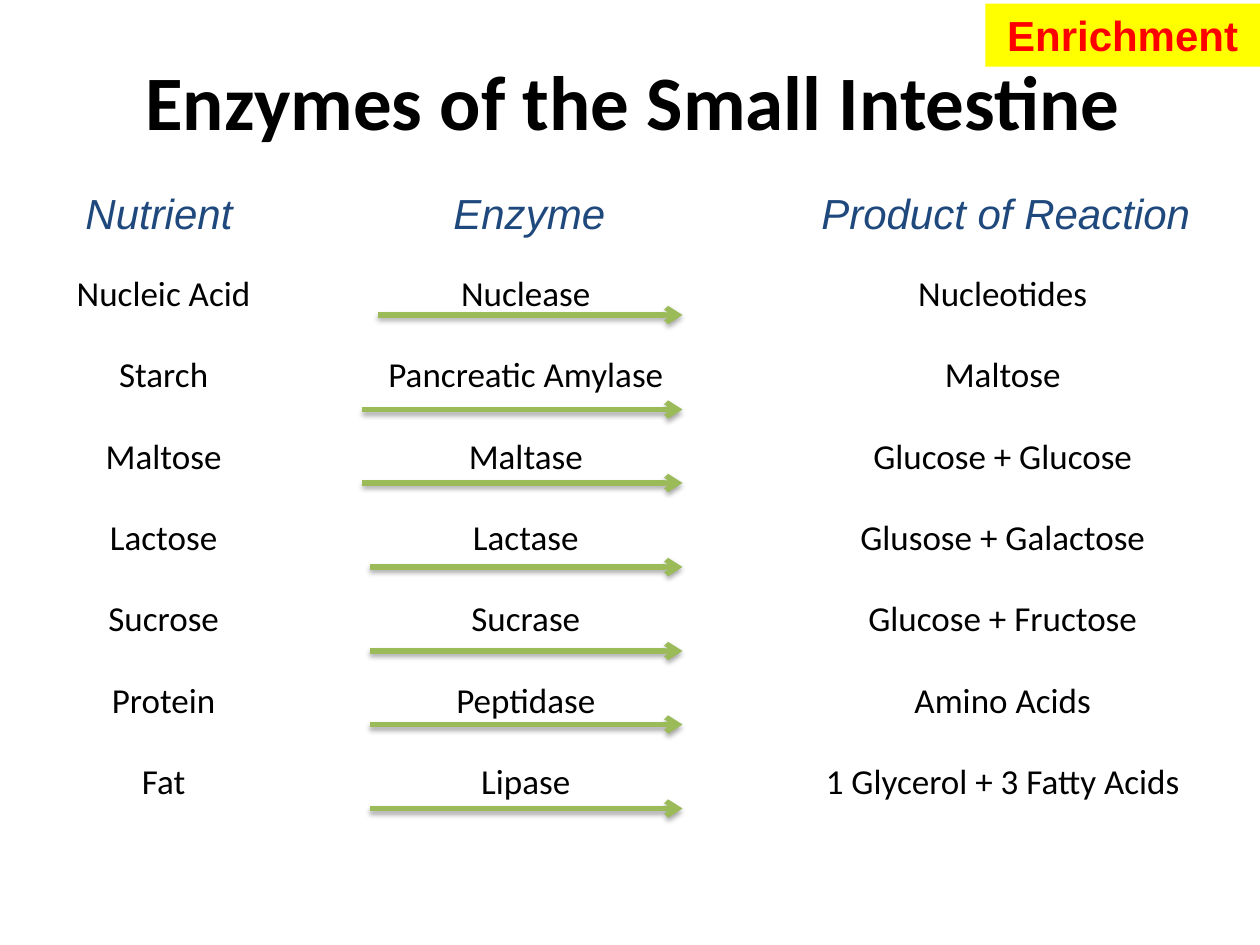
from dataclasses import dataclass

from lxml import etree
from pptx import Presentation
from pptx import util as u
from pptx.dml.color import RGBColor
from pptx.enum import shapes, text
from pptx.oxml import parse_xml
from pptx.oxml.ns import nsdecls, qn


@dataclass(frozen=True)
class Theme:
    heading_font: str = "Arial"
    body_font: str = "Calibri"
    ink: str = "000000"
    heading: str = "1F497D"
    arrow: str = "9BBB59"
    tag_fill: str = "FFFF00"
    tag_text: str = "FF0000"
    title_size: int = 44
    heading_size: int = 24
    body_size: int = 20
    arrow_width: int = 3


T = Theme()
NO_STYLE_NO_GRID = "{2D5ABB26-0587-4C30-8999-92F81FD0307C}"

# Grid of 120 columns by 90 rows, twelve to the inch
COLS, ROWS, PER_INCH = 120, 90, 12

# Text, left column, width in columns
HEADINGS = [
    ("Nutrient", 6.96, 17.64),
    ("Enzyme", 42, 18.12),
    ("Product of Reaction", 77.04, 37.92),
]
REACTIONS = [
    ("Nucleic Acid", "Nuclease", "Nucleotides"),
    ("Starch", "Pancreatic Amylase", "Maltose"),
    ("Maltose", "Maltase", "Glucose + Glucose"),
    ("Lactose", "Lactase", "Glusose + Galactose"),
    ("Sucrose", "Sucrase", "Glucose + Fructose"),
    ("Protein", "Peptidase", "Amino Acids"),
    ("Fat", "Lipase", "1 Glycerol + 3 Fatty Acids"),
]
COLUMN_WIDTHS = (23.16, 45.84, 45)
TABLE_LEFT, TABLE_TOP, TABLE_ROW = 4, 24.12, 7.75

# Start column and row of each arrow; all end at the same column
ARROWS = [(36, 30), (34.5, 39), (34.5, 46), (35.2, 54), (35.2, 62), (35.2, 69), (35.2, 77)]
ARROW_END = 65


def grid(n):
    return u.Inches(n / PER_INCH)


def box(*units):
    return [grid(n) for n in units]


def style(p, font, size, color, align=None, bold=False, italic=False):
    p.alignment = align
    for r in p.runs:
        r.font.name, r.font.size = font, u.Pt(size)
        r.font.bold, r.font.italic = bold, italic
        r.font.color.rgb = RGBColor.from_string(color)


def add_title(s, title):
    sp = s.shapes.title
    sp.left, sp.top, sp.width, sp.height = box(8, 3.1, 108, 12.8)
    tf = sp.text_frame
    tf.text = title
    tf.vertical_anchor = text.MSO_ANCHOR.MIDDLE
    tf.margin_right = u.Inches(0.38)  # sets the title a little left of centre
    style(tf.paragraphs[0], T.body_font, T.title_size, T.ink, text.PP_ALIGN.CENTER, bold=True)


def add_heading(s, label, left, width):
    tf = s.shapes.add_textbox(*box(left, 17.28, width, 6)).text_frame
    tf.text = label
    tf.word_wrap = True
    tf.auto_size = text.MSO_AUTO_SIZE.SHAPE_TO_FIT_TEXT
    style(tf.paragraphs[0], T.heading_font, T.heading_size, T.heading, italic=True)


def add_reactions(s):
    frame = s.shapes.add_table(
        len(REACTIONS), len(COLUMN_WIDTHS),
        *box(TABLE_LEFT, TABLE_TOP, sum(COLUMN_WIDTHS), TABLE_ROW * len(REACTIONS)))
    table = frame.table
    table.first_row = table.horz_banding = False
    next(frame.element.iter(qn("a:tableStyleId"))).text = NO_STYLE_NO_GRID
    for column, width in zip(table.columns, COLUMN_WIDTHS):
        column.width = grid(width)
    for row, values in zip(table.rows, REACTIONS):
        row.height = grid(TABLE_ROW)
        for cell, value in zip(row.cells, values):
            cell.text = value
            cell.fill.background()
            cell.vertical_anchor = text.MSO_ANCHOR.MIDDLE
            cell.margin_left = cell.margin_right = cell.margin_top = u.Inches(0.01)
            cell.margin_bottom = 0
            style(cell.text_frame.paragraphs[0], T.body_font, T.body_size, T.ink,
                  text.PP_ALIGN.CENTER)


def add_arrow(s, start, row):
    line = s.shapes.add_connector(
        shapes.MSO_CONNECTOR.STRAIGHT, *box(start, row, ARROW_END, row))
    line.line.color.rgb = RGBColor.from_string(T.arrow)
    line.line.width = u.Pt(T.arrow_width)
    # Open arrowhead and soft shadow below
    etree.SubElement(line.line._get_or_add_ln(), qn("a:tailEnd"), type="arrow")
    line.element.spPr.append(parse_xml(
        f'<a:effectLst {nsdecls("a")}>'
        f'<a:outerShdw blurRad="{u.Pt(3.1)}" dist="{u.Pt(1.8)}" dir="5400000" rotWithShape="0">'
        '<a:srgbClr val="000000"><a:alpha val="35000"/></a:srgbClr>'
        '</a:outerShdw></a:effectLst>'))


def add_tag(s, label):
    sp = s.shapes.add_shape(shapes.MSO_SHAPE.RECTANGLE, *box(93.84, 0.36, 26.16, 6))
    sp.shadow.inherit = False
    sp.fill.solid()
    sp.fill.fore_color.rgb = RGBColor.from_string(T.tag_fill)
    sp.line.fill.background()
    tf = sp.text_frame
    tf.text = label
    tf.word_wrap = True
    tf.auto_size = text.MSO_AUTO_SIZE.SHAPE_TO_FIT_TEXT
    tf.vertical_anchor = text.MSO_ANCHOR.TOP
    style(tf.paragraphs[0], T.heading_font, T.heading_size, T.tag_text,
          text.PP_ALIGN.CENTER, bold=True)


def main():
    prs = Presentation()
    prs.slide_width, prs.slide_height = box(COLS, ROWS)
    s = prs.slides.add_slide(prs.slide_layouts.get_by_name("Title Only"))

    add_title(s, "Enzymes of the Small Intestine")
    for heading in HEADINGS:
        add_heading(s, *heading)
    add_reactions(s)
    for arrow in ARROWS:
        add_arrow(s, *arrow)
    add_tag(s, "Enrichment")

    prs.save("out.pptx")


if __name__ == "__main__":
    main()
